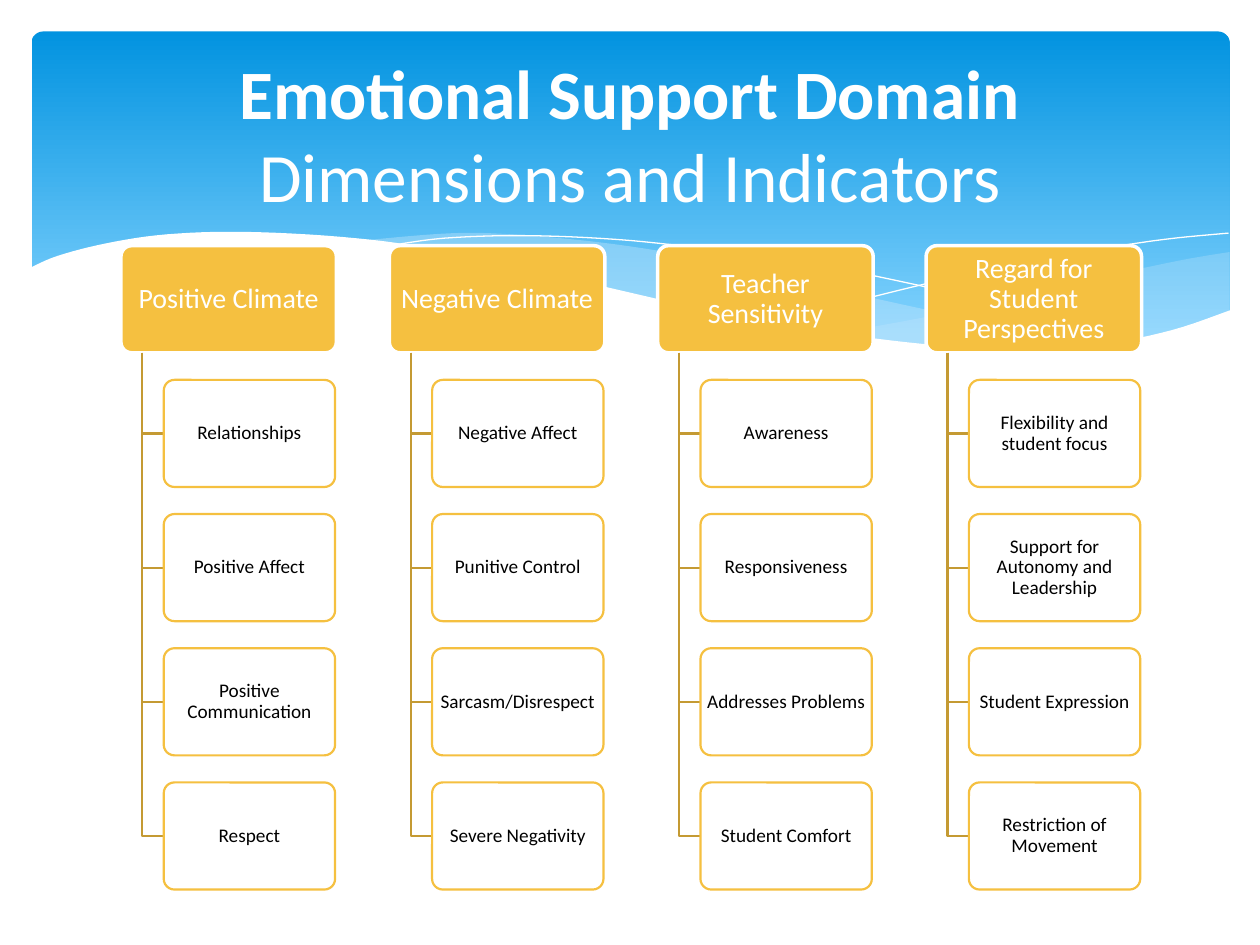
"""Build the Emotional Support Domain slide: four dimensions with their indicators."""
from dataclasses import dataclass
from typing import Optional

from lxml.etree import SubElement
from pptx import Presentation
from pptx.dml.color import RGBColor
from pptx.enum.shapes import MSO_SHAPE
from pptx.enum.text import MSO_ANCHOR, MSO_AUTO_SIZE, PP_ALIGN
from pptx.oxml.ns import qn
from pptx.util import Inches, Pt

COLORS = {
    "white": "FFFFFF",
    "black": "000000",
    "sky_top": "0293E0",
    "sky_bottom": "83D3FE",
    "mist": "C6E7FC",
    "gold": "F5C040",
    "dark_gold": "C49A33",
}
FONT = "Calibri"
FIRST_LEFT, FIRST_TOP = 0.96, 1.95
COLUMN_STEP, ROW_STEP = 2.13, 1.065
HEADER_WIDTH, ITEM_WIDTH, BOX_HEIGHT = 1.71, 1.36, 0.85
TRUNK_INDENT, ITEM_INDENT = 0.17, 0.34
CURVE_STEPS = 6

Points = list[tuple[float, float]]


@dataclass(frozen=True)
class Wave:
    """One outline made of smooth edges joined at corners."""

    edges: list[Points]
    fill: Optional[str] = None
    opacity: int = 100


@dataclass(frozen=True)
class BoxStyle:
    """The look of a kind of diagram box."""

    width: float
    fill: str
    opacity: int
    line: str
    line_width: float
    text: str
    size: int
    side_inset: float


@dataclass(frozen=True)
class Dimension:
    """A dimension and its indicators."""

    name: str
    indicators: list[str]


HEADER = BoxStyle(HEADER_WIDTH, "gold", 100, "white", 2, "white", 16, 0.03)
ITEM = BoxStyle(ITEM_WIDTH, "white", 90, "gold", 1.25, "black", 11, 0.02)

WAVES = [
    Wave([
        [(9.76, 2), (9.35, 2.07), (8.61, 2.23), (7.53, 2.48), (6.61, 2.65)],
        [(6.61, 2.65), (7.05, 2.71), (7.57, 2.76), (8.14, 2.78), (8.63, 2.75),
         (9.05, 2.69), (9.42, 2.59), (9.76, 2.47)],
    ], "mist", 29),
    Wave([
        [(8.93, 2.73), (8.37, 2.65), (7.41, 2.47), (6.29, 2.22), (5.55, 2.05),
         (4.89, 1.94), (4.2, 1.87), (3.61, 1.85), (2.86, 1.91)],
        [(2.86, 1.91), (3.62, 2.03), (4.49, 2.22), (5.66, 2.48), (6.5, 2.64),
         (7.22, 2.74), (7.96, 2.78), (8.48, 2.77), (8.93, 2.73)],
    ], "mist", 40),
    Wave([[(3.09, 1.95), (3.53, 1.89), (4.16, 1.87), (4.89, 1.9), (5.56, 1.97),
           (6.36, 2.08), (7.27, 2.26), (8.31, 2.51), (9.07, 2.72)]]),
    Wave([[(6.13, 2.57), (6.95, 2.35), (7.76, 2.16), (8.66, 1.99), (9.24, 1.9),
           (9.75, 1.85)]]),
    Wave([
        [(9.77, 2.46), (9.3, 2.62), (8.75, 2.73), (8.09, 2.77), (7.44, 2.74),
         (6.68, 2.65), (5.79, 2.5), (4.47, 2.2), (3.4, 1.97), (2.71, 1.88),
         (1.93, 1.84), (1.32, 1.86), (0.85, 1.93), (0.46, 2.03), (0.23, 2.13)],
        [(0.23, 3.29), (9.77, 3.29)],
    ], "white"),
]

DIMENSIONS = [
    Dimension("Positive Climate", [
        "Relationships", "Positive Affect", "Positive Communication", "Respect"]),
    Dimension("Negative Climate", [
        "Negative Affect", "Punitive Control", "Sarcasm/Disrespect", "Severe Negativity"]),
    Dimension("Teacher Sensitivity", [
        "Awareness", "Responsiveness", "Addresses Problems", "Student Comfort"]),
    Dimension("Regard for Student Perspectives", [
        "Flexibility and student focus", "Support for Autonomy and Leadership",
        "Student Expression", "Restriction of Movement"]),
]


def color(name: str) -> RGBColor:
    return RGBColor.from_string(COLORS[name])


def paint(shape, name: str, opacity: int = 100) -> None:
    shape.fill.solid()
    shape.fill.fore_color.rgb = color(name)
    if opacity < 100:
        tone = shape.fill._xPr.find(f"{qn('a:solidFill')}/{qn('a:srgbClr')}")
        SubElement(tone, qn("a:alpha"), val=str(opacity * 1000))


def smooth(knots: Points) -> Points:
    """Run a Catmull-Rom curve through the knots."""
    padded = [knots[0], *knots, knots[-1]]
    curve = [knots[0]]
    for before, start, end, after in zip(padded, padded[1:], padded[2:], padded[3:]):
        for step in range(1, CURVE_STEPS + 1):
            t = step / CURVE_STEPS
            x, y = (
                b + t * ((c - a) + t * ((2 * a - 5 * b + 4 * c - d) + t * (3 * b - a - 3 * c + d))) / 2
                for a, b, c, d in zip(before, start, end, after)
            )
            curve.append((x, y))
    return curve


def draw_outline(page, points: Points, closed: bool):
    corners = [(Inches(x), Inches(y)) for x, y in points]
    builder = page.shapes.build_freeform(*corners[0])
    builder.add_line_segments(corners[1:], close=closed)
    shape = builder.convert_to_shape()
    shape.shadow.inherit = False
    return shape


def draw_open_line(page, points: Points, name: str, width: float) -> None:
    shape = draw_outline(page, points, False)
    shape.fill.background()
    shape.line.color.rgb = color(name)
    shape.line.width = Pt(width)


def draw_wave(page, wave: Wave) -> None:
    points = [point for edge in wave.edges for point in smooth(edge)]
    if wave.fill is None:
        draw_open_line(page, points, "white", 0)
        return
    shape = draw_outline(page, points, True)
    paint(shape, wave.fill, wave.opacity)
    shape.line.fill.background()


def add_round_box(page, left: float, top: float, width: float, height: float, corner: float):
    box = page.shapes.add_shape(
        MSO_SHAPE.ROUNDED_RECTANGLE, Inches(left), Inches(top), Inches(width), Inches(height))
    box.adjustments[0] = corner
    box.shadow.inherit = False
    return box


def draw_sky(page) -> None:
    sky = add_round_box(page, 0.25, 0.25, 9.51, 2.7, 0.034)
    sky.line.fill.background()
    sky.fill.gradient()
    sky.fill.gradient_angle = 270
    stops = [("sky_top", 0), ("sky_bottom", 0.9)]
    for stop, (name, position) in zip(sky.fill.gradient_stops, stops):
        stop.color.rgb = color(name)
        stop.position = position


def add_span(para, text: str, size: float, name: str, bold: bool = False) -> None:
    span = para.add_run()
    span.text = text
    span.font.name = FONT
    span.font.size = Pt(size)
    span.font.bold = bold
    span.font.color.rgb = color(name)


def draw_box(page, left: float, top: float, text: str, style: BoxStyle) -> None:
    box = add_round_box(page, left, top, style.width, BOX_HEIGHT, 0.1)
    paint(box, style.fill, style.opacity)
    box.line.color.rgb = color(style.line)
    box.line.width = Pt(style.line_width)
    frame = box.text_frame
    frame.word_wrap = True
    frame.vertical_anchor = MSO_ANCHOR.MIDDLE
    frame.margin_left = frame.margin_right = Inches(style.side_inset)
    frame.margin_top = frame.margin_bottom = Inches(0.02)
    para = frame.paragraphs[0]
    para.alignment = PP_ALIGN.CENTER
    para.line_spacing = 0.9
    add_span(para, text, style.size, style.text)


def draw_dimension(page, left: float, dimension: Dimension) -> None:
    draw_box(page, left, FIRST_TOP, dimension.name, HEADER)
    trunk, item_left = left + TRUNK_INDENT, left + ITEM_INDENT
    for row, indicator in enumerate(dimension.indicators, start=1):
        top = FIRST_TOP + row * ROW_STEP
        middle = top + BOX_HEIGHT / 2
        elbow = [(trunk, FIRST_TOP + BOX_HEIGHT), (trunk, middle), (item_left, middle)]
        draw_open_line(page, elbow, "dark_gold", 1.25)
        draw_box(page, item_left, top, indicator, ITEM)


def write_title(page) -> None:
    title = page.shapes.title
    title.left, title.top, title.width, title.height = map(Inches, (0.5, 0.37, 9, 1.37))
    frame = title.text_frame
    frame.auto_size = MSO_AUTO_SIZE.NONE
    frame.vertical_anchor = MSO_ANCHOR.MIDDLE
    para = frame.paragraphs[0]
    para.alignment = PP_ALIGN.CENTER
    add_span(para, "Emotional Support Domain", 39.6, "white", bold=True)
    para.add_line_break()
    add_span(para, "Dimensions and Indicators", 39.6, "white")
    page.shapes._spTree.append(title._element)


def main() -> None:
    deck = Presentation()
    deck.slide_width, deck.slide_height = Inches(10), Inches(7.5)
    page = deck.slides.add_slide(deck.slide_layouts[5])
    draw_sky(page)
    for wave in WAVES:
        draw_wave(page, wave)
    for column, dimension in enumerate(DIMENSIONS):
        draw_dimension(page, FIRST_LEFT + column * COLUMN_STEP, dimension)
    write_title(page)
    deck.save("out.pptx")


if __name__ == "__main__":
    main()
